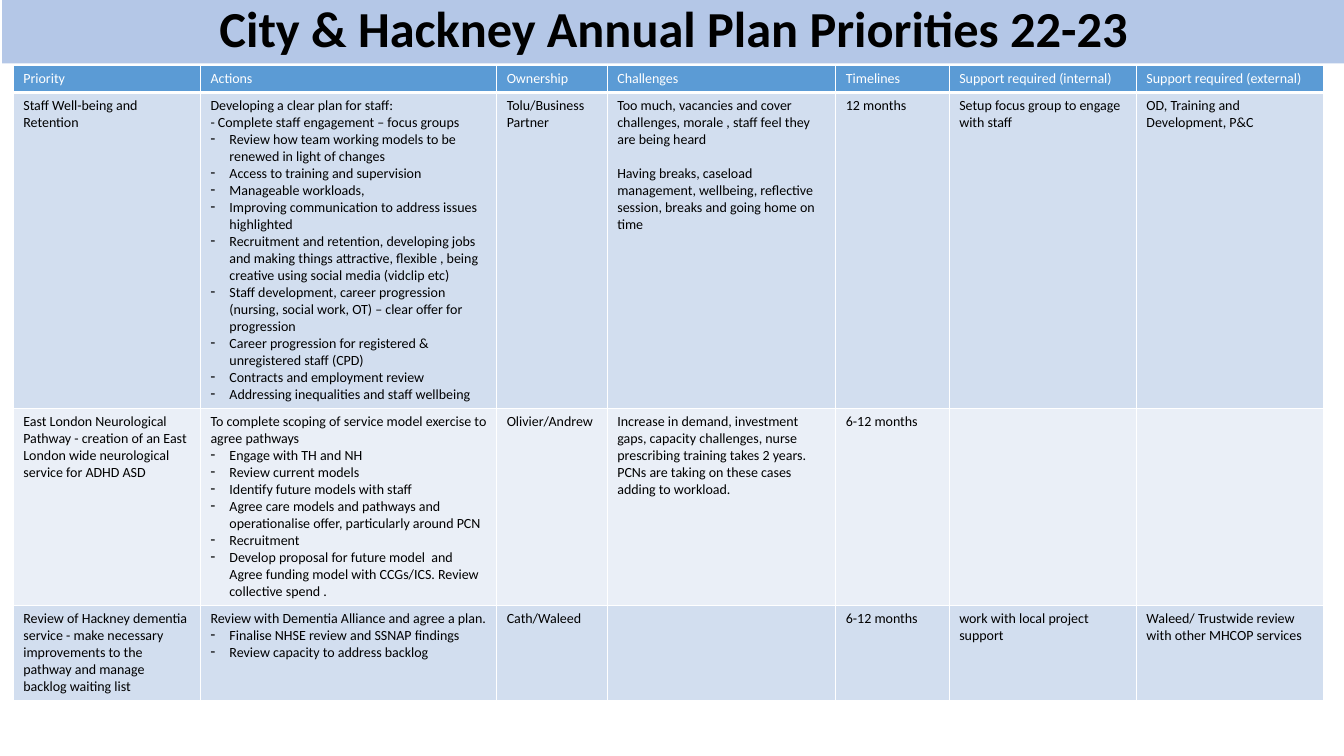
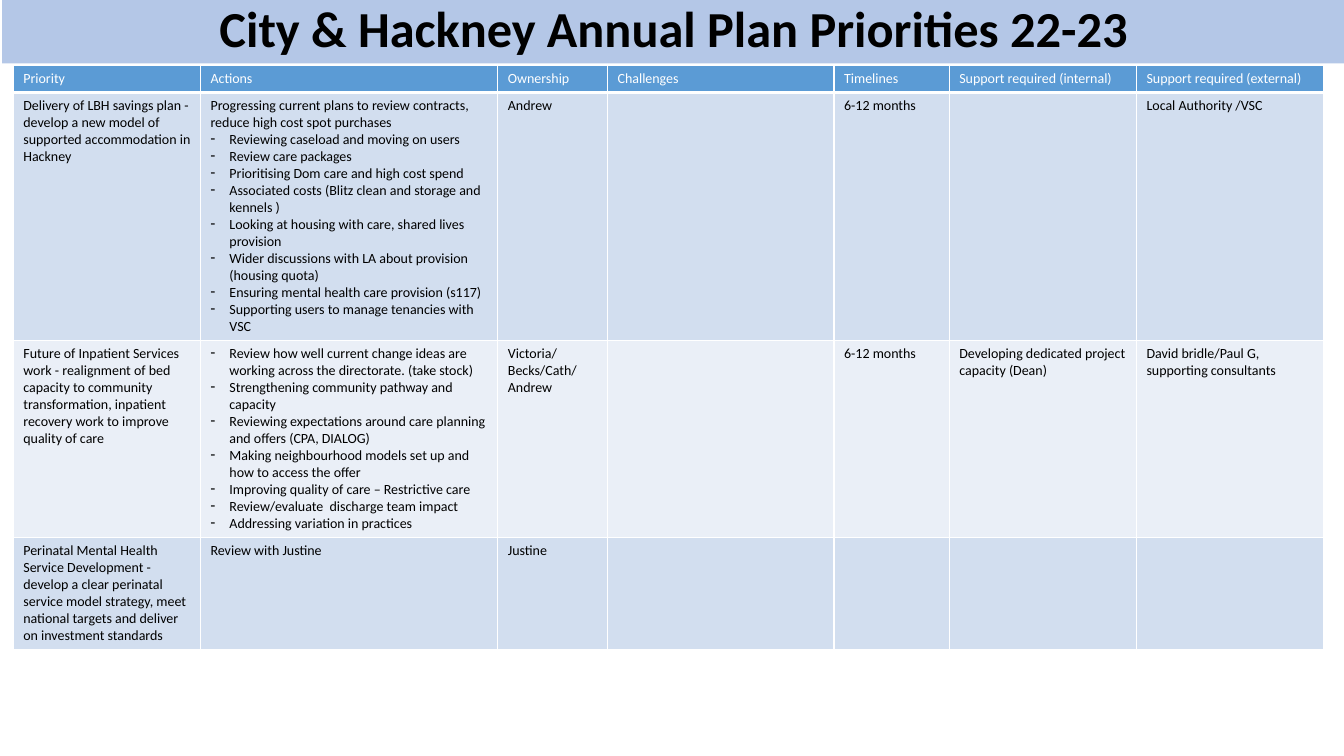
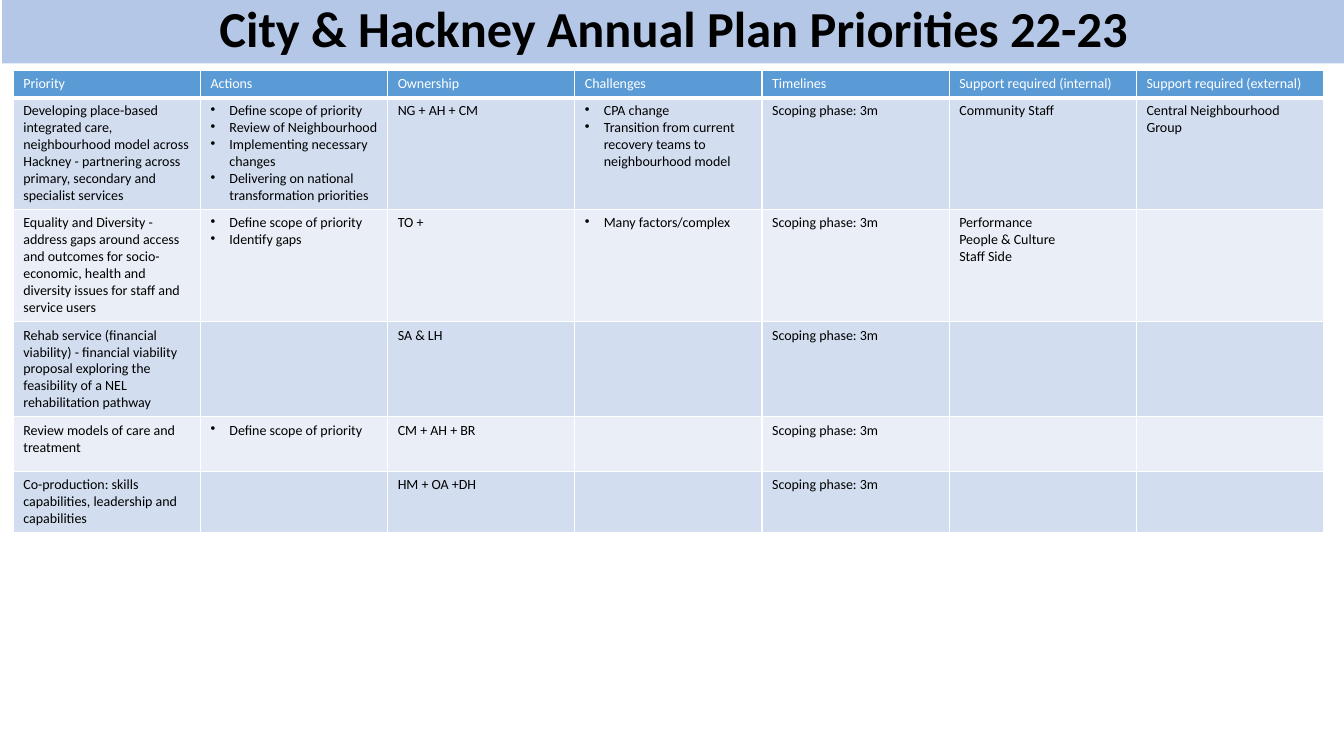
from dataclasses import dataclass

from lxml.etree import SubElement
from pptx import Presentation
from pptx.dml.color import RGBColor
from pptx.enum.shapes import MSO_SHAPE
from pptx.enum.text import MSO_ANCHOR, PP_ALIGN
from pptx.oxml.ns import qn
from pptx.util import Pt


@dataclass(frozen=True)
class Theme:
    font: str = "Calibri"
    band: str = "B4C7E7"
    header: str = "5B9BD5"
    rows: tuple = ("D2DEEF", "EAEFF7")
    white: str = "FFFFFF"
    black: str = "000000"
    title_size: float = 36
    table_size: float = 10
    indent: float = 13.5
    blank_line: float = 12.2
    thin: float = 1
    thick: float = 3


TITLE = "City & Hackney Annual Plan Priorities 22-23"
HEADINGS = ["Priority", "Actions", "Ownership", "Challenges", "Timelines",
            "Support required (internal)", "Support required (external)"]
TABLE_LEFT, TABLE_WIDTH, HEADER_HEIGHT = 9.5, 936, 19
EVEN_WIDTH = TABLE_WIDTH / len(HEADINGS)


@dataclass(frozen=True)
class Line:
    text: str
    bullet: str = ""
    gap: float = 0


def dashes(*texts):
    return [Line(text, "-") for text in texts]


def dots(*texts):
    return [Line(text, "•") for text in texts]


def as_lines(content):
    """Turn a plain string or a mixed list into Line objects."""
    items = content if isinstance(content, list) else [content]
    return [item if isinstance(item, Line) else Line(item) for item in items]


class Deck:
    def __init__(self, theme):
        self.theme = theme
        self.presentation = Presentation()
        self.presentation.slide_width = Pt(960)
        self.presentation.slide_height = Pt(540)
        self.slide = None

    def add_slide(self):
        self.slide = self.presentation.slides.add_slide(
            self.presentation.slide_layouts[6])
        self.title_band()

    def add_text(self, paragraph, text, color, **formats):
        run = paragraph.add_run()
        run.text = text
        run.font.color.rgb = RGBColor.from_string(color)
        for name, value in {"name": self.theme.font, **formats}.items():
            setattr(run.font, name, value)

    def paint(self, fill, color):
        fill.solid()
        fill.fore_color.rgb = RGBColor.from_string(color)

    def title_band(self):
        shape = self.slide.shapes.add_shape(
            MSO_SHAPE.RECTANGLE, Pt(1.5), Pt(-5.8), Pt(960), Pt(51.1))
        shape.shadow.inherit = False
        self.paint(shape.fill, self.theme.band)
        shape.line.fill.background()
        frame = shape.text_frame
        frame.word_wrap = True
        frame.vertical_anchor = MSO_ANCHOR.MIDDLE
        paragraph = frame.paragraphs[0]
        paragraph.alignment = PP_ALIGN.CENTER
        self.add_text(paragraph, TITLE, self.theme.black,
                      size=Pt(self.theme.title_size), bold=True)

    def borders(self, cell, bottom):
        properties = cell._tc.get_or_add_tcPr()
        thin = self.theme.thin
        for side, width in {"L": thin, "R": thin, "T": thin, "B": bottom}.items():
            line = SubElement(properties, qn(f"a:ln{side}"), w=str(Pt(width)))
            fill = SubElement(line, qn("a:solidFill"))
            SubElement(fill, qn("a:srgbClr"), val=self.theme.white)

    def bullet(self, paragraph, mark):
        properties = paragraph._p.get_or_add_pPr()
        indent = Pt(self.theme.indent)
        properties.set("marL", str(indent))
        properties.set("indent", str(-indent))
        SubElement(properties, qn("a:buChar"), char=mark)

    def fill_cell(self, cell, content, fill, color, bottom):
        self.borders(cell, bottom)
        self.paint(cell.fill, fill)
        frame = cell.text_frame
        for number, line in enumerate(as_lines(content)):
            paragraph = frame.add_paragraph() if number else frame.paragraphs[0]
            if line.gap:
                paragraph.space_before = Pt(line.gap)
            if line.bullet:
                self.bullet(paragraph, line.bullet)
            if line.text:
                self.add_text(paragraph, line.text, color,
                              size=Pt(self.theme.table_size), bold=False)

    def priorities_table(self, top, middle_widths, heights, rows):
        """Draw the plan; middle_widths covers Actions to Timelines."""
        theme = self.theme
        widths = [EVEN_WIDTH, *middle_widths, EVEN_WIDTH, EVEN_WIDTH]
        heights = [HEADER_HEIGHT, *heights]
        table = self.slide.shapes.add_table(
            len(heights), len(widths), Pt(TABLE_LEFT), Pt(top),
            Pt(TABLE_WIDTH), Pt(sum(heights))).table
        table.first_row = table.horz_banding = False
        for column, width in zip(table.columns, widths):
            column.width = Pt(width)
        for row, height in zip(table.rows, heights):
            row.height = Pt(height)
        for r, contents in enumerate([HEADINGS, *rows]):
            if r:
                style = theme.rows[(r - 1) % 2], theme.black, theme.thin
            else:
                style = theme.header, theme.white, theme.thick
            for c, content in enumerate(contents):
                self.fill_cell(table.cell(r, c), content, *style)


STAFF_AND_PATHWAYS = [
    ["Staff Well-being and Retention",
     ["Developing a clear plan for staff:",
      "- Complete staff engagement – focus groups",
      *dashes(
          "Review how team working models to be renewed in light of changes",
          "Access to training and supervision",
          "Manageable workloads,",
          "Improving communication to address issues highlighted",
          "Recruitment and retention, developing jobs and making things "
          "attractive, flexible , being creative using social media (vidclip etc)",
          "Staff development, career progression (nursing, social work, OT) "
          "– clear offer for progression",
          "Career progression for registered & unregistered staff (CPD)",
          "Contracts and employment review",
          "Addressing inequalities and staff wellbeing")],
     "Tolu/Business Partner",
     ["Too much, vacancies and cover challenges, morale , staff feel they are "
      "being heard",
      Line("Having breaks, caseload management, wellbeing, reflective session, "
           "breaks and going home on time", gap=Theme.blank_line)],
     "12 months",
     "Setup focus group to engage with staff",
     "OD, Training and Development, P&C"],
    ["East London Neurological Pathway - creation of an East London wide "
     "neurological service for ADHD ASD",
     ["To complete scoping of service model exercise to agree pathways",
      *dashes(
          "Engage with TH and NH",
          "Review current models",
          "Identify future models with staff",
          "Agree care models and pathways and operationalise offer, "
          "particularly around PCN",
          "Recruitment",
          "Develop proposal for future model  and Agree funding model with "
          "CCGs/ICS. Review collective spend .")],
     "Olivier/Andrew",
     "Increase in demand, investment gaps, capacity challenges, nurse "
     "prescribing training takes 2 years. PCNs are taking on these cases "
     "adding to workload.",
     "6-12 months", "", ""],
    ["Review of Hackney dementia service - make necessary improvements to the "
     "pathway and manage backlog waiting list",
     ["Review with Dementia Alliance and agree a plan.",
      *dashes("Finalise NHSE review and SSNAP findings",
              "Review capacity to address backlog")],
     "Cath/Waleed", "", "6-12 months",
     "work with local project support",
     "Waleed/ Trustwide review with other MHCOP services"],
]

SAVINGS_AND_INPATIENTS = [
    ["Delivery of LBH savings plan - develop a new model of supported "
     "accommodation in Hackney",
     ["Progressing current plans to review contracts, reduce high cost spot "
      "purchases",
      *dashes(
          "Reviewing caseload and moving on users",
          "Review care packages",
          "Prioritising Dom care and high cost spend",
          "Associated costs (Blitz clean and storage and kennels )",
          "Looking at housing with care, shared lives  provision",
          "Wider discussions with LA about provision (housing quota)",
          "Ensuring mental health care provision (s117)",
          "Supporting users to manage tenancies with VSC")],
     "Andrew", "", "6-12 months", "", "Local Authority /VSC"],
    ["Future of Inpatient Services work - realignment of bed capacity to "
     "community transformation, inpatient recovery work to improve quality "
     "of care",
     dashes(
         "Review how well current change ideas are working across the "
         "directorate. (take stock)",
         "Strengthening community pathway and capacity",
         "Reviewing expectations around care planning and offers (CPA, DIALOG)",
         "Making neighbourhood models set up and how to access the offer",
         "Improving quality of care – Restrictive care",
         "Review/evaluate  discharge team impact",
         "Addressing variation in practices"),
     "Victoria/Becks/Cath/Andrew", "", "6-12 months",
     "Developing dedicated project capacity (Dean)",
     "David bridle/Paul G, supporting consultants"],
    ["Perinatal Mental Health Service Development - develop a clear perinatal "
     "service model strategy, meet national targets and deliver on investment "
     "standards",
     "Review with Justine", "Justine", "", "", "", ""],
]

SCOPE, SCOPING = "Define scope of priority", "Scoping phase: 3m"
SCOPING_PRIORITIES = [
    ["Developing place-based integrated care, neighbourhood model across "
     "Hackney - partnering across primary, secondary and specialist services",
     dots(SCOPE, "Review of Neighbourhood", "Implementing necessary changes",
          "Delivering on national transformation priorities"),
     "NG + AH + CM",
     dots("CPA change",
          "Transition from current recovery teams to neighbourhood model"),
     SCOPING, "Community Staff", "Central Neighbourhood Group"],
    ["Equality and Diversity - address gaps around access and outcomes for "
     "socio-economic, health and diversity issues for staff and service users",
     dots(SCOPE, "Identify gaps"), "TO +", dots("Many factors/complex"),
     SCOPING, ["Performance", "People & Culture", "Staff Side"], ""],
    ["Rehab service (financial viability) - financial viability proposal "
     "exploring the feasibility of a NEL rehabilitation pathway",
     "", "SA & LH", "", SCOPING, "", ""],
    ["Review models of care and treatment",
     dots(SCOPE), "CM + AH + BR", "", SCOPING, "", ""],
    ["Co-production: skills capabilities, leadership and capabilities",
     "", "HM + OA +DH", "", SCOPING, "", ""],
]

PLANS = [
    (46.8, [211.6, 79, 163.3, 81], [223, 139, 67], STAFF_AND_PATHWAYS),
    (46.8, [212.4, 78.4, 161.8, 82.3], [175, 139, 79], SAVINGS_AND_INPATIENTS),
    (50.4, [EVEN_WIDTH] * 4, [79, 79, 67, 38.9, 43], SCOPING_PRIORITIES),
]


def main():
    deck = Deck(Theme())
    for plan in PLANS:
        deck.add_slide()
        deck.priorities_table(*plan)
    deck.presentation.save("out.pptx")


if __name__ == "__main__":
    main()
